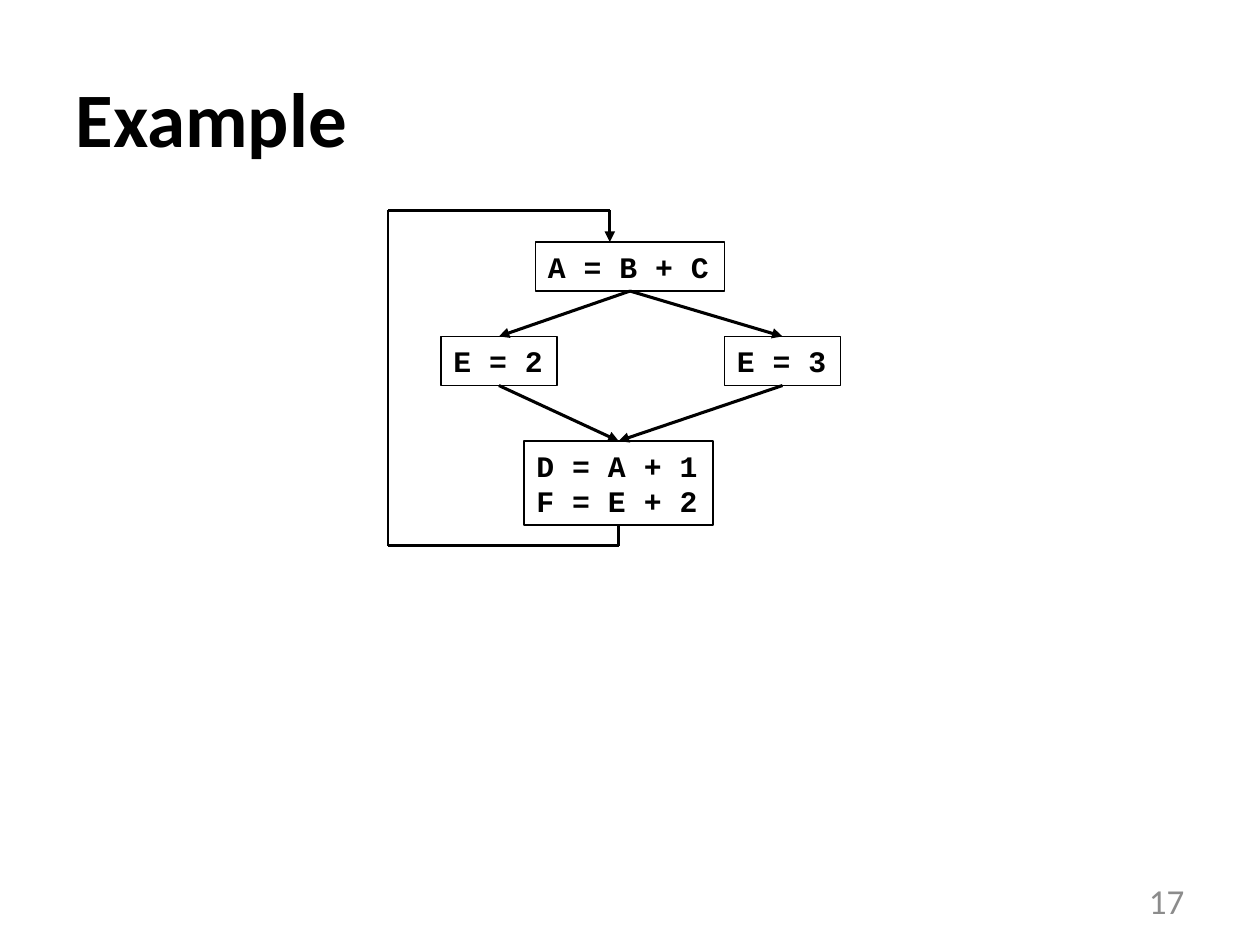
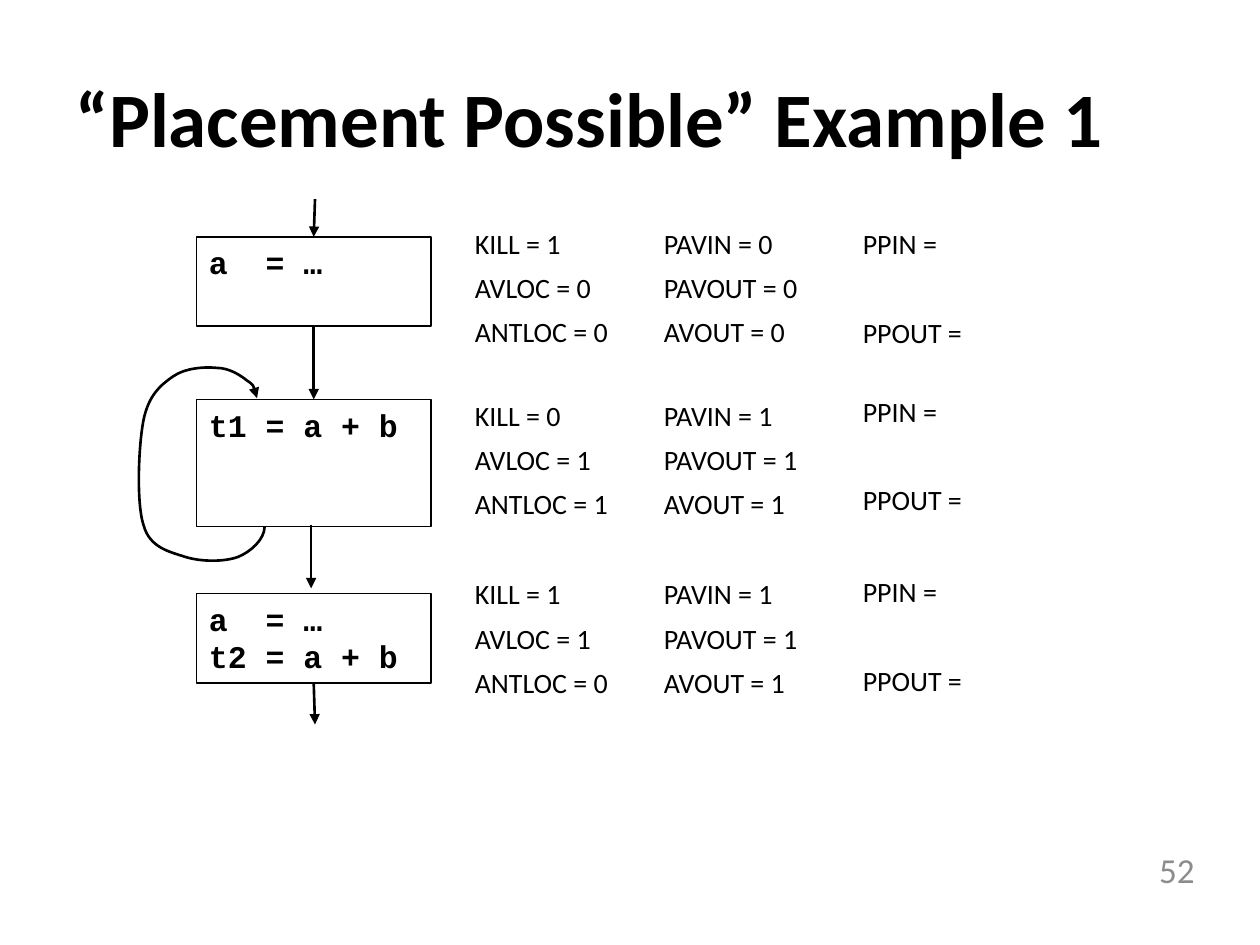
import dataclasses
import itertools
import typing

import lxml.etree
import pptx
import pptx.dml.color
import pptx.enum.shapes
import pptx.enum.text
import pptx.oxml.ns
import pptx.util

PX = pptx.util.Inches(1) // 100
COLORS = {"ink": "000000", "number": "8C8C8C"}
BODY_FONT = "Calibri"
CODE_FONT = "Courier New"
TITLE_AREA = (50, 30, 900, 125)
TITLE_ONLY = 5
TOP, BOTTOM = 0, 2

Point = tuple[int, int]


@dataclasses.dataclass(frozen=True)
class TextStyle:
    size: int
    font: str = BODY_FONT
    color: str = "ink"
    bold: bool = False
    align: typing.Any = pptx.enum.text.PP_ALIGN.LEFT
    anchor: typing.Any = pptx.enum.text.MSO_ANCHOR.TOP
    line_pitch: float | None = None
    space_before: float = 0


@dataclasses.dataclass(frozen=True)
class Block:
    left: int
    top: int
    width: int
    height: int
    code: str


@dataclasses.dataclass(frozen=True)
class Edge:
    start: Point
    end: Point
    width: float = 1.5
    arrow: bool = True
    source: typing.Any = None
    target: typing.Any = None


MIDDLE = pptx.enum.text.MSO_ANCHOR.MIDDLE
TITLE = TextStyle(44, bold=True, anchor=MIDDLE)
PAGE_NUMBER = TextStyle(
    20, color="number", align=pptx.enum.text.PP_ALIGN.RIGHT, anchor=MIDDLE
)
FLOW_CODE = TextStyle(17, CODE_FONT, bold=True, line_pitch=20.5)
PLACEMENT_CODE = TextStyle(18, CODE_FONT, bold=True)
FACTS = TextStyle(16, space_before=6)

FLOW_BLOCKS = {
    "entry": Block(425, 192, 150, 39, "A = B + C"),
    "left": Block(350, 267, 92, 39, "E = 2"),
    "right": Block(575, 267, 92, 39, "E = 3"),
    "join": Block(416, 350, 150, 67, "D = A + 1\nF = E + 2"),
}
FLOW_BRANCHES = [
    ("entry", "left"), ("entry", "right"), ("left", "join"), ("right", "join")
]
BACK_EDGE = [(491, 433), (308, 433), (308, 167), (484, 167), (484, 192)]

PLACEMENT_BLOCKS = [
    Block(156, 188, 186, 71, "a  = …"),
    Block(156, 317, 186, 101, "t1 = a + b"),
    Block(156, 471, 186, 71, "a  = …\nt2 = a + b"),
]
FACT_NAMES = [("KILL", "AVLOC", "ANTLOC"), ("PAVIN", "PAVOUT", "AVOUT")]
FACT_COLUMNS = [(367, 128), (517, 130)]
FACT_TOPS = [175, 311, 453]
FACT_VALUES = [
    ((1, 0, 0), (0, 0, 0)),
    ((0, 1, 1), (1, 1, 1)),
    ((1, 1, 0), (1, 1, 1)),
]
FACT_HEIGHT = 108
UNKNOWN_TOPS = [175, 308, 451]
UNKNOWN_GAP = 31.5
LOOP_CURVE = [
    (210, 418),
    (210, 428), (199, 438), (189, 442),
    (178, 446), (160, 446), (147, 442),
    (135, 438), (119, 435), (114, 417),
    (108, 399), (110, 353), (114, 333),
    (118, 314), (127, 306), (137, 299),
    (147, 292), (162, 291), (172, 292),
    (182, 292), (191, 298), (196, 302),
    (202, 306), (203, 311), (204, 316),
]


def px(*lengths: int) -> list[int]:
    return [length * PX for length in lengths]


def rgb(name: str) -> pptx.dml.color.RGBColor:
    return pptx.dml.color.RGBColor.from_string(COLORS[name])


def write(frame: typing.Any, text: str, style: TextStyle) -> None:
    frame.text = text
    frame.word_wrap = True
    frame.auto_size = pptx.enum.text.MSO_AUTO_SIZE.NONE
    frame.vertical_anchor = style.anchor
    for paragraph in frame.paragraphs:
        paragraph.alignment = style.align
        paragraph.space_before = pptx.util.Pt(style.space_before)
        if style.line_pitch:
            paragraph.line_spacing = pptx.util.Pt(style.line_pitch)
        for run in paragraph.runs:
            run.font.name = style.font
            run.font.size = pptx.util.Pt(style.size)
            run.font.bold = style.bold
            run.font.color.rgb = rgb(style.color)


def add_text(
    slide: typing.Any, area: tuple[int, int, int, int], text: str, style: TextStyle
) -> typing.Any:
    label = slide.shapes.add_textbox(*px(*area))
    write(label.text_frame, text, style)
    return label


def add_block(slide: typing.Any, block: Block, style: TextStyle) -> typing.Any:
    node = slide.shapes.add_shape(
        pptx.enum.shapes.MSO_SHAPE.RECTANGLE,
        *px(block.left, block.top, block.width, block.height),
    )
    node.shadow.inherit = False
    node.fill.background()
    node.line.color.rgb = rgb("ink")
    node.line.width = pptx.util.Pt(1)
    write(node.text_frame, block.code, style)
    return node


def style_stroke(stroke: typing.Any, width: float, arrow: bool) -> None:
    stroke.line.color.rgb = rgb("ink")
    stroke.line.width = pptx.util.Pt(width)
    if arrow:
        line = stroke.line._get_or_add_ln()
        lxml.etree.SubElement(line, pptx.oxml.ns.qn("a:tailEnd"), type="triangle")


def add_edge(slide: typing.Any, edge: Edge) -> None:
    connector = slide.shapes.add_connector(
        pptx.enum.shapes.MSO_CONNECTOR.STRAIGHT, *px(*edge.start, *edge.end)
    )
    if edge.source is not None:
        connector.begin_connect(edge.source, BOTTOM)
    if edge.target is not None:
        connector.end_connect(*edge.target)
    style_stroke(connector, edge.width, edge.arrow)
    lxml.etree.SubElement(
        connector._element.spPr, pptx.oxml.ns.qn("a:effectLst")
    )


def add_curve(slide: typing.Any, points: list[Point]) -> None:
    builder = slide.shapes.build_freeform(*points[0], scale=PX)
    builder.add_line_segments(points[1:], close=False)
    curve = builder.convert_to_shape()
    curve.shadow.inherit = False
    curve.fill.background()
    style_stroke(curve, 1.5, True)
    segments = list(curve._element.iter(pptx.oxml.ns.qn("a:lnTo")))
    for first, second, third in zip(*[iter(segments)] * 3):
        first.tag = pptx.oxml.ns.qn("a:cubicBezTo")
        for segment in (second, third):
            first.append(segment[0])
            segment.getparent().remove(segment)


def add_page(
    deck: typing.Any, title: str, number: str, number_at: Point
) -> typing.Any:
    slide = deck.slides.add_slide(deck.slide_layouts[TITLE_ONLY])
    heading = slide.shapes.title
    heading.left, heading.top, heading.width, heading.height = px(*TITLE_AREA)
    write(heading.text_frame, title, TITLE)
    add_text(slide, (*number_at, 233, 40), number, PAGE_NUMBER)
    return slide


def build_flow_example(deck: typing.Any) -> None:
    slide = add_page(deck, "Example", "17", (717, 695))
    nodes = {
        name: add_block(slide, block, FLOW_CODE)
        for name, block in FLOW_BLOCKS.items()
    }
    for source, target in FLOW_BRANCHES:
        add_edge(
            slide,
            Edge((0, 0), (0, 0), 1.75, True, nodes[source], (nodes[target], TOP)),
        )
    for start, end in itertools.pairwise(BACK_EDGE):
        last = end == BACK_EDGE[-1]
        add_edge(slide, Edge(start, end, 1.75 if last else 1.5, last))
    add_edge(
        slide,
        Edge(BACK_EDGE[0], (491, 417), arrow=False, target=(nodes["join"], BOTTOM)),
    )


def build_placement_example(deck: typing.Any) -> None:
    slide = add_page(deck, "“Placement Possible” Example 1", "52", (725, 670))
    first, loop, last = [
        add_block(slide, block, PLACEMENT_CODE) for block in PLACEMENT_BLOCKS
    ]
    for edge in (
        Edge((250, 158), (249, 188), target=(first, TOP)),
        Edge((249, 259), (249, 317), source=first, target=(loop, TOP)),
        Edge((247, 417), (247, 467)),
        Edge((249, 542), (250, 575), source=last),
    ):
        add_edge(slide, edge)
    add_curve(slide, LOOP_CURVE)
    for top, unknown_top, row in zip(FACT_TOPS, UNKNOWN_TOPS, FACT_VALUES):
        for (left, width), names, values in zip(FACT_COLUMNS, FACT_NAMES, row):
            facts = "\n".join(
                f"{name} = {value}" for name, value in zip(names, values)
            )
            add_text(slide, (left, top, width, FACT_HEIGHT), facts, FACTS)
        unknowns = add_text(
            slide, (675, unknown_top, 100, FACT_HEIGHT), "PPIN =\nPPOUT =", FACTS
        )
        unknowns.text_frame.paragraphs[1].space_before = pptx.util.Pt(UNKNOWN_GAP)


def main() -> None:
    deck = pptx.Presentation()
    deck.slide_width, deck.slide_height = px(1000, 750)
    build_flow_example(deck)
    build_placement_example(deck)
    deck.save("out.pptx")


if __name__ == "__main__":
    main()
